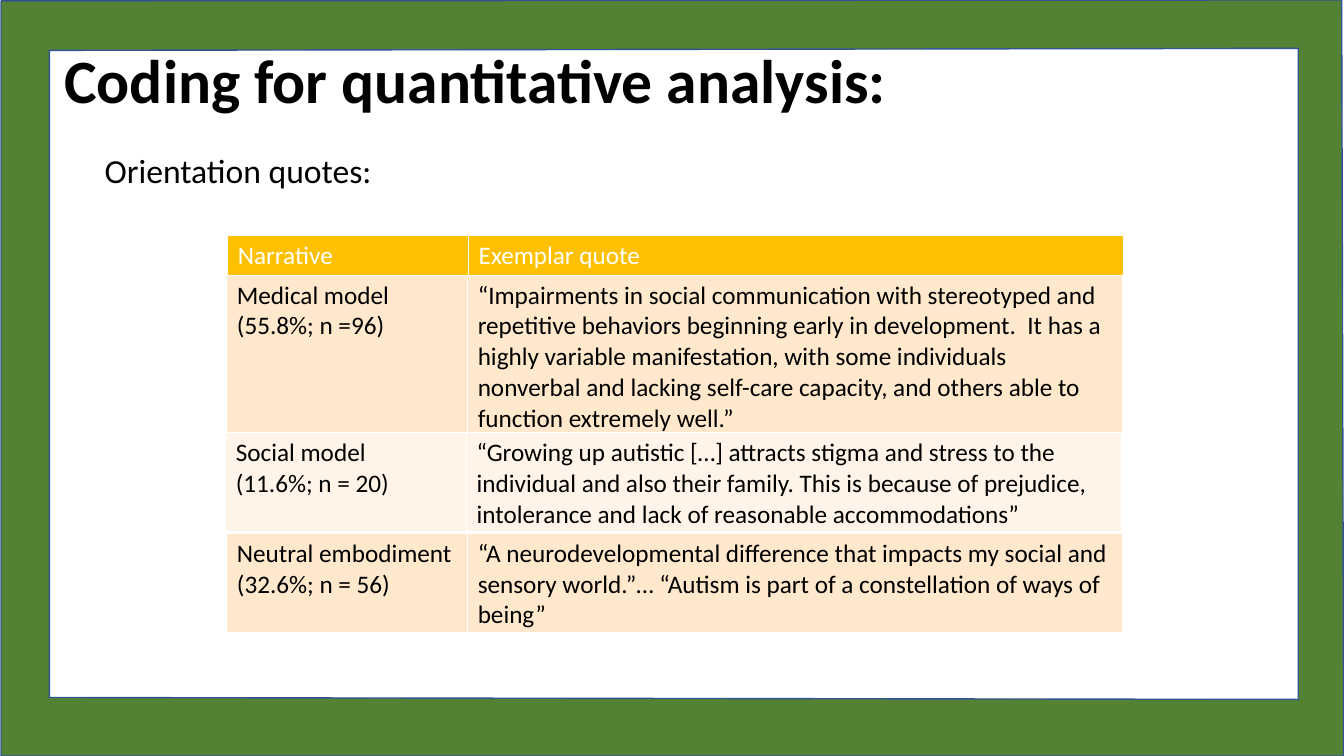
from lxml import etree
from pptx import Presentation
from pptx.dml.color import RGBColor
from pptx.enum.text import MSO_ANCHOR
from pptx.oxml.ns import qn
from pptx.util import Inches, Pt

MIDDLE, TOP = MSO_ANCHOR.MIDDLE, MSO_ANCHOR.TOP
BLACK, WHITE = "000000", "FFFFFF"
GREEN, NAVY = "548235", "325491"
GOLD, PEACH, CREAM = "FFC000", "FFE8CB", "FFF4E7"
FONT = "Calibri"
BORDERS = {"a:lnL": 1, "a:lnR": 1, "a:lnT": 1, "a:lnB": 3}
COLUMNS = (17.92, 48.75)

FRAME_OUTER = [(0.08, 0.13), (99.83, 0), (99.98, 100), (0.08, 100)]
FRAME_INNER = [(3.68, 6.67), (3.68, 92.27), (96.6, 92.53), (96.6, 6.4)]

NARRATIVES = [
    (16.95, 31.2, 5.47, GOLD, WHITE, ["Narrative"], "Exemplar quote"),
    (16.88, 36.4, 21.33, PEACH, BLACK, ["Medical model", "(55.8%; n =96)"],
     "“Impairments in social communication with stereotyped and repetitive "
     "behaviors beginning early in development.  It has a highly variable "
     "manifestation, with some individuals nonverbal and lacking self-care "
     "capacity, and others able to function extremely well.”"),
    (16.8, 57.2, 13.33, CREAM, BLACK, ["Social model", "(11.6%; n = 20)"],
     "“Growing up autistic […] attracts stigma and stress to the individual "
     "and also their family. This is because of prejudice, intolerance and "
     "lack of reasonable accommodations”"),
    (16.88, 70.53, 13.33, PEACH, BLACK, ["Neutral embodiment", "(32.6%; n = 56)"],
     "“A neurodevelopmental difference that impacts my social and sensory "
     "world.”… “Autism is part of a constellation of ways of being”"),
]


def rgb(color):
    return RGBColor.from_string(color)


class Deck:
    """Draws styled elements on one slide, with lengths in percent of its size."""

    def __init__(self):
        self.prs = Presentation()
        self.prs.slide_width, self.prs.slide_height = Inches(13.33), Inches(7.5)
        self.s = self.prs.slides.add_slide(self.prs.slide_layouts[6])

    def x(self, share):
        return round(self.prs.slide_width * share / 100)

    def y(self, share):
        return round(self.prs.slide_height * share / 100)

    def box(self, left, top, width, height):
        return self.x(left), self.y(top), self.x(width), self.y(height)

    def add_lines(self, tf, lines, size, color, bold=False, spacing=None):
        tf.word_wrap = True
        for i, line in enumerate(lines):
            p = tf.add_paragraph() if i else tf.paragraphs[0]
            p.line_spacing = spacing
            r = p.add_run()
            r.text = line
            r.font.name, r.font.size, r.font.bold = FONT, Pt(size), bold
            r.font.color.rgb = rgb(color)

    def text(self, place, line, size, anchor=TOP, **style):
        tf = self.s.shapes.add_textbox(*self.box(*place)).text_frame
        tf.vertical_anchor = anchor
        self.add_lines(tf, [line], size, BLACK, **style)

    def frame(self, outer, inner):
        outer, inner = ([(self.x(a), self.y(b)) for a, b in ring]
                        for ring in (outer, inner))
        outline = self.s.shapes.build_freeform(*outer[0], scale=1.0)
        outline.add_line_segments(outer[1:], close=True)
        outline.move_to(*inner[0])
        outline.add_line_segments(inner[1:], close=True)
        sp = outline.convert_to_shape()
        sp.shadow.inherit = False
        sp.fill.solid()
        sp.fill.fore_color.rgb = rgb(GREEN)
        sp.line.color.rgb = rgb(NAVY)
        sp.line.width = Pt(1)

    def border(self, cell):
        tc_pr = cell._tc.get_or_add_tcPr()
        for i, (tag, width) in enumerate(BORDERS.items()):
            ln = etree.Element(qn(tag), w=str(Pt(width)))
            fill = etree.SubElement(ln, qn("a:solidFill"))
            etree.SubElement(fill, qn("a:srgbClr"), val=WHITE)
            tc_pr.insert(i, ln)

    def table(self, left, top, height, fill, color, label, quote):
        place = self.box(left, top, sum(COLUMNS), height)
        table = self.s.shapes.add_table(1, len(COLUMNS), *place).table
        table.first_row = table.horz_banding = False
        for i, (width, lines) in enumerate(zip(COLUMNS, (label, [quote]))):
            table.columns[i].width = self.x(width)
            cell = table.cell(0, i)
            cell.fill.solid()
            cell.fill.fore_color.rgb = rgb(fill)
            self.border(cell)
            self.add_lines(cell.text_frame, lines, 18, color)


def main():
    deck = Deck()
    deck.text((4.05, 5.07, 85.58, 11.87), "Coding for quantitative analysis:", 44,
              MIDDLE, bold=True, spacing=0.9)
    deck.frame(FRAME_OUTER, FRAME_INNER)
    deck.text((7.05, 19.2, 69.83, 6.67), "Orientation quotes:", 24)
    for narrative in NARRATIVES:
        deck.table(*narrative)
    deck.prs.save("out.pptx")


if __name__ == "__main__":
    main()
